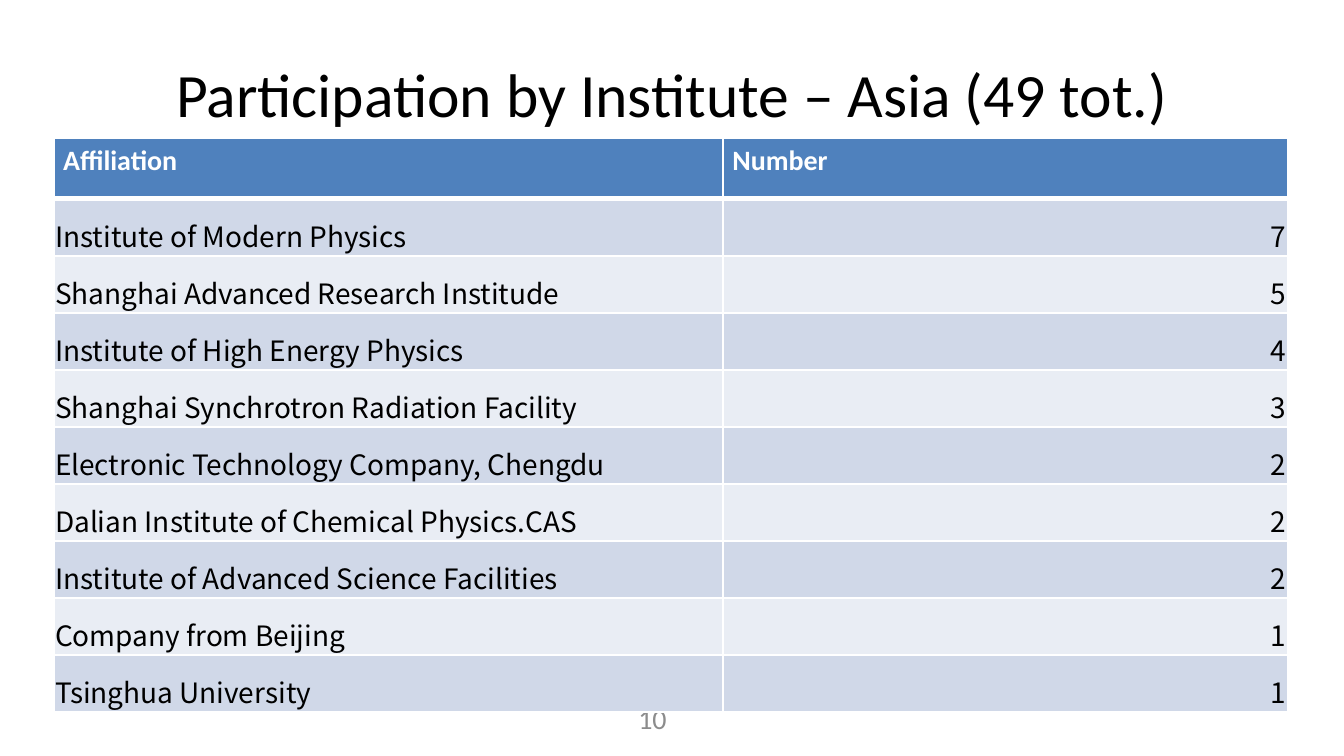
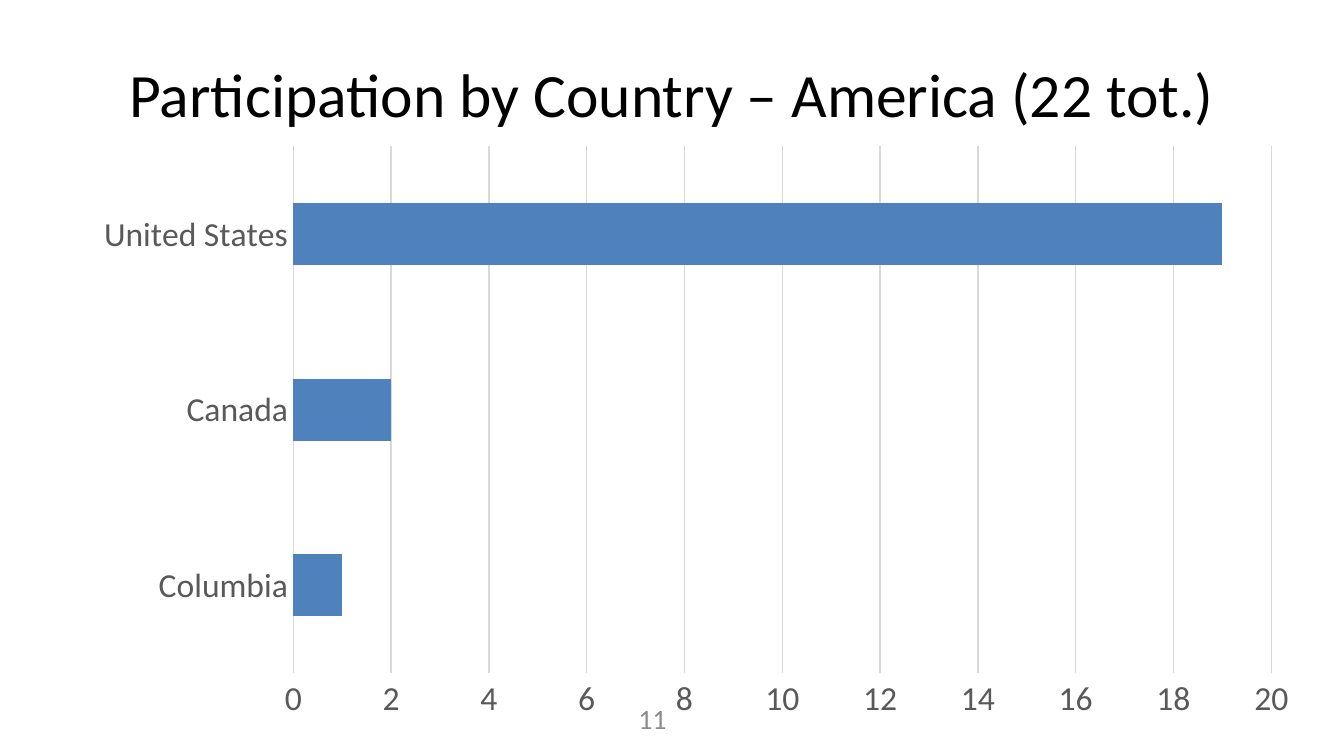
import pptx
import pptx.chart.data
import pptx.dml.color
import pptx.enum.chart
import pptx.enum.text
import pptx.oxml
import pptx.oxml.ns
import pptx.util

FONT = "Calibri"
TABLE_FONT = "Noto Sans CJK KR"
BLACK, WHITE, BLUE = "000000", "FFFFFF", "4F81BD"
NUMBER_GREY, AXIS_GREY, GRID_GREY = "8C8C8C", "595959", "D9D9D9"
BANDS = ["D0D8E8", "E9EDF4"]
ALIGN = pptx.enum.text.PP_ALIGN
ANCHOR = pptx.enum.text.MSO_ANCHOR
color = pptx.dml.color.RGBColor.from_string

presentation = pptx.Presentation()
presentation.slide_width = pptx.util.Inches(10)
presentation.slide_height = pptx.util.Inches(5.625)
column = presentation.slide_width / 100
row_unit = presentation.slide_height / 100


def place(left, top, width, height):
    return [round(length) for length in (left * column, top * row_unit, width * column, height * row_unit)]


def add_run(paragraph, text, size, hex_color, font=FONT, bold=False):
    run = paragraph.add_run()
    run.text = text
    run.font.name = font
    run.font.size = pptx.util.Pt(size)
    run.font.bold = bold
    run.font.color.rgb = color(hex_color)


titles = ["Participation by Institute – Asia (49 tot.)", "Participation by Country – America (22 tot.)"]
slides = []
for page, title_text in enumerate(titles, start=10):
    slide = presentation.slides.add_slide(presentation.slide_layouts[5])
    slide.background.fill.solid()
    slide.background.fill.fore_color.rgb = color(WHITE)
    title = slide.shapes.title
    title.left, title.top, title.width, title.height = place(5, 4, 90, 16.7)
    number = slide.shapes.add_textbox(*place(36.9, 92.4, 23.3, 5.3))
    for shape, text, size, hex_color in [(title, title_text, 33, BLACK), (number, str(page), 15, NUMBER_GREY)]:
        frame = shape.text_frame
        frame.word_wrap = True
        frame.vertical_anchor = ANCHOR.MIDDLE
        frame.paragraphs[0].alignment = ALIGN.CENTER
        add_run(frame.paragraphs[0], text, size, hex_color)
    slides.append(slide)

institutes = [
    ("Affiliation", "Number"),
    ("Institute of Modern Physics", "7"),
    ("Shanghai Advanced Research Institude", "5"),
    ("Institute of High Energy Physics", "4"),
    ("Shanghai Synchrotron Radiation Facility", "3"),
    ("Electronic Technology Company, Chengdu", "2"),
    ("Dalian Institute of Chemical Physics.CAS", "2"),
    ("Institute of Advanced Science Facilities", "2"),
    ("Company from Beijing", "1"),
    ("Tsinghua University", "1"),
]
table = slides[0].shapes.add_table(len(institutes), 2, *place(4, 18.3, 91.8, 75.9)).table
for table_column, share in zip(table.columns, (49.8, 42)):
    table_column.width = round(share * column)
for row_index, values in enumerate(institutes):
    header = row_index == 0
    table.rows[row_index].height = round((8 if header else 7.54) * row_unit)
    for column_index, text in enumerate(values):
        cell = table.cell(row_index, column_index)
        properties = cell._tc.get_or_add_tcPr()
        for side in ("lnL", "lnR", "lnT", "lnB"):
            thick = (row_index, side) in [(0, "lnB"), (1, "lnT")]
            width = pptx.util.Pt(3 if thick else 1)
            properties.append(pptx.oxml.parse_xml(
                f'<a:{side} {pptx.oxml.ns.nsdecls("a")} w="{width}"><a:solidFill>'
                f'<a:srgbClr val="{WHITE}"/></a:solidFill></a:{side}>'))
        cell.fill.solid()
        cell.fill.fore_color.rgb = color(BLUE if header else BANDS[(row_index - 1) % 2])
        cell.vertical_anchor = ANCHOR.TOP if header else ANCHOR.BOTTOM
        cell.margin_left = cell.margin_right = pptx.util.Inches(0.07 if header else 0.01)
        cell.margin_top = pptx.util.Inches(0.04 if header else 0.01)
        cell.margin_bottom = pptx.util.Inches(0.04 if header else 0)
        paragraph = cell.text_frame.paragraphs[0]
        paragraph.alignment = ALIGN.RIGHT if column_index and not header else ALIGN.LEFT
        if header:
            add_run(paragraph, text, 15, WHITE, bold=True)
        else:
            add_run(paragraph, text, 15, BLACK, font=TABLE_FONT)

chart_data = pptx.chart.data.CategoryChartData()
chart_data.categories = ["Columbia", "Canada", "United States"]
chart_data.add_series("Series 1", [1, 2, 19])
chart = slides[1].shapes.add_chart(
    pptx.enum.chart.XL_CHART_TYPE.BAR_CLUSTERED, *place(5.9, 17.8, 91.8, 78.9), chart_data).chart
chart.has_title = False
chart.has_legend = False
chart.font.name = FONT
chart.font.size = pptx.util.Pt(18)
chart.font.color.rgb = color(BLACK)
chart.element.find(pptx.oxml.ns.qn("c:chart")).addnext(pptx.oxml.parse_xml(
    f'<c:spPr {pptx.oxml.ns.nsdecls("c", "a")}><a:noFill/><a:ln><a:noFill/></a:ln></c:spPr>'))

plot = chart.plots[0]
plot.gap_width = 182
plot.vary_by_categories = False
plot.series[0].format.fill.solid()
plot.series[0].format.fill.fore_color.rgb = color(BLUE)

category_axis, value_axis = chart.category_axis, chart.value_axis
for axis in (category_axis, value_axis):
    axis.major_tick_mark = axis.minor_tick_mark = pptx.enum.chart.XL_TICK_MARK.NONE
    axis.tick_labels.font.name = FONT
    axis.tick_labels.font.size = pptx.util.Pt(18)
    axis.tick_labels.font.color.rgb = color(AXIS_GREY)
category_axis.has_major_gridlines = False
value_axis.has_major_gridlines = True
value_axis.minimum_scale, value_axis.maximum_scale, value_axis.major_unit = 0, 20, 2
value_axis.format.line.fill.background()
for line in (category_axis.format.line, value_axis.major_gridlines.format.line):
    line.width = pptx.util.Pt(0.75)
    line.color.rgb = color(GRID_GREY)

presentation.save("out.pptx")
